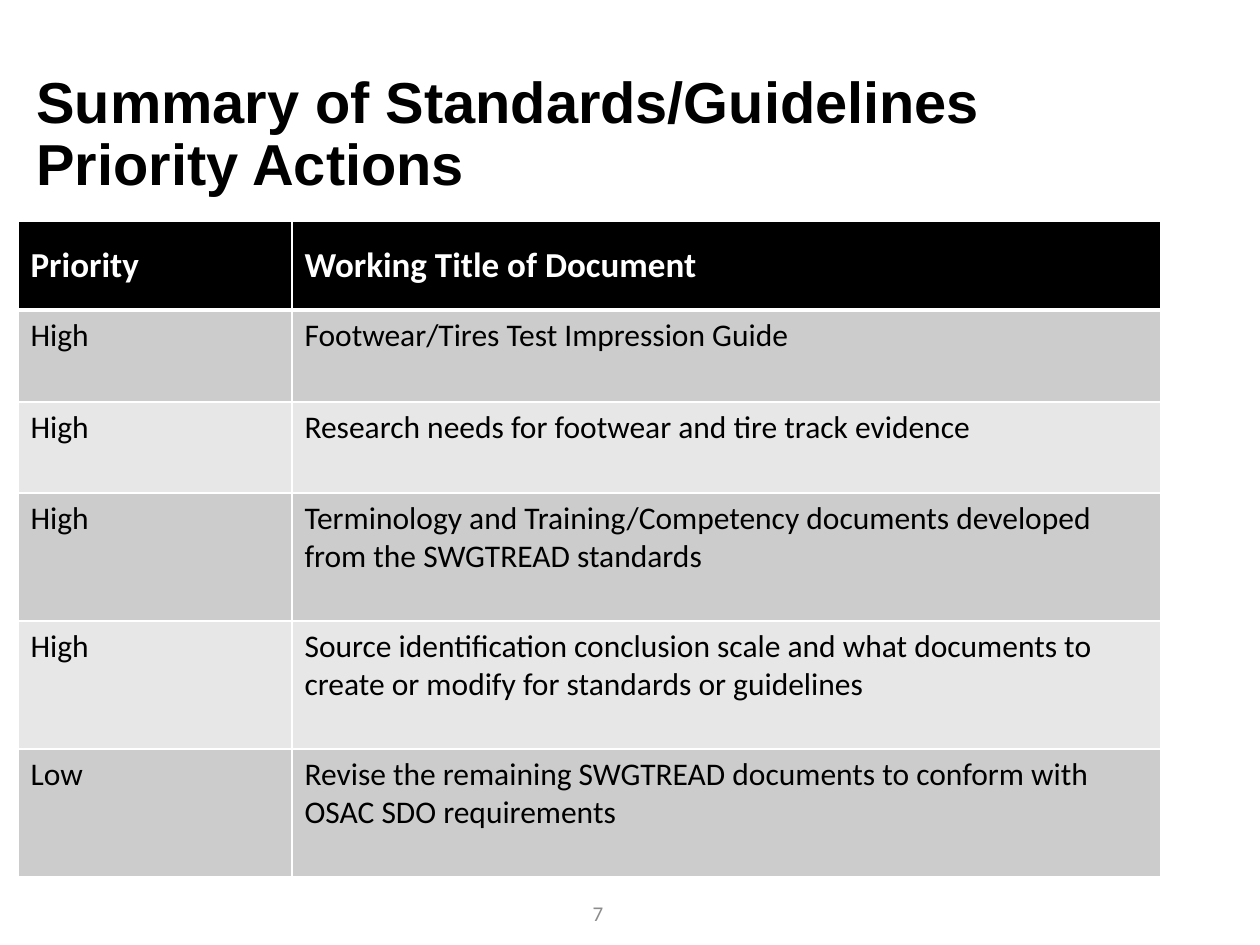
from lxml import etree
from pptx import Presentation, util as u
from pptx.dml.color import RGBColor
from pptx.enum import text
from pptx.oxml.ns import qn

PX = 914400 / 126
BLACK = RGBColor(0x00, 0x00, 0x00)
WHITE = RGBColor(0xFF, 0xFF, 0xFF)
DARK_BAND = RGBColor(0xCC, 0xCC, 0xCC)
LIGHT_BAND = RGBColor(0xE7, 0xE7, 0xE7)
GRAY = RGBColor(0x8C, 0x8C, 0x8C)


def px(n):
    return u.Emu(round(n * PX))


def add_run(p, words, size, color, font="Calibri", bold=False):
    r = p.add_run()
    r.text = words
    r.font.name, r.font.size, r.font.bold = font, u.Pt(size), bold
    r.font.color.rgb = color


prs = Presentation()
prs.slide_width, prs.slide_height = px(1260), px(945)
s = prs.slides.add_slide(prs.slide_layouts[6])

# Title and page number
labels = [
    ((24, 44, 1086, 183), "Summary of Standards/Guidelines Priority Actions",
     33, BLACK, "Arial", True, text.PP_ALIGN.LEFT, 0.9),
    ((456, 888, 284, 50), "7",
     12, GRAY, "Calibri", False, text.PP_ALIGN.CENTER, 1.0),
]
for box, words, size, color, font, bold, align, spacing in labels:
    tf = s.shapes.add_textbox(*map(px, box)).text_frame
    tf.word_wrap = True
    tf.vertical_anchor = text.MSO_ANCHOR.MIDDLE
    p = tf.paragraphs[0]
    p.alignment, p.line_spacing = align, spacing
    add_run(p, words, size, color, font, bold)

# Priority table
rows = [
    ("Priority", "Working Title of Document"),
    ("High", "Footwear/Tires Test Impression Guide"),
    ("High", "Research needs for footwear and tire track evidence"),
    ("High", "Terminology and Training/Competency documents developed "
             "from the SWGTREAD standards"),
    ("High", "Source identification conclusion scale and what documents to "
             "create or modify for standards or guidelines"),
    ("Low", "Revise the remaining SWGTREAD documents to conform with "
            "OSAC SDO requirements"),
]
widths = [274, 869]
heights = [89, 92, 91, 128, 128, 128]
table = s.shapes.add_table(len(rows), len(widths), px(18), px(221),
                           px(sum(widths)), px(sum(heights))).table
for column, width in zip(table.columns, widths):
    column.width = px(width)
for i, (row, height) in enumerate(zip(rows, heights)):
    table.rows[i].height = px(height)
    header = i == 0
    for j, words in enumerate(row):
        cell = table.cell(i, j)
        if header:
            cell.vertical_anchor = text.MSO_ANCHOR.MIDDLE
        add_run(cell.text_frame.paragraphs[0], words, 20 if header else 18,
                WHITE if header else BLACK, bold=header)

        # White borders, thicker between header and body
        for side in ("L", "R", "T", "B"):
            thick = (i, side) in ((0, "B"), (1, "T"))
            ln = etree.SubElement(cell._tc.get_or_add_tcPr(), qn(f"a:ln{side}"),
                                  w=str(u.Pt(3 if thick else 1)))
            fill = etree.SubElement(ln, qn("a:solidFill"))
            etree.SubElement(fill, qn("a:srgbClr"), val=str(WHITE))
        cell.fill.solid()
        cell.fill.fore_color.rgb = (
            BLACK if header else DARK_BAND if i % 2 else LIGHT_BAND)

prs.save("out.pptx")
